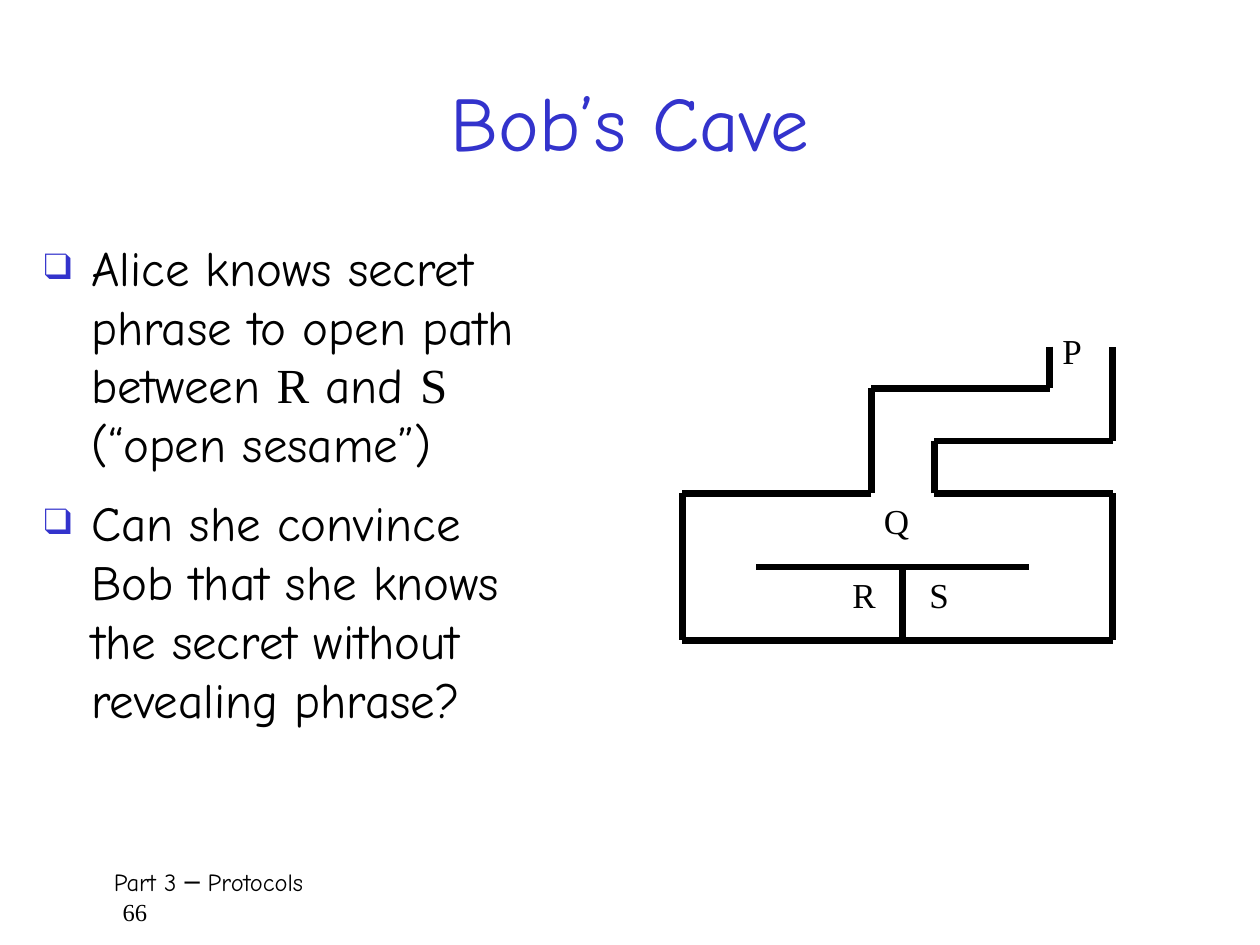
"""Build the Bob's Cave slide: title, two bullets and a cave plan."""
from itertools import pairwise

from lxml import etree
from pptx import Presentation
from pptx.dml.color import RGBColor
from pptx.enum import shapes, text
from pptx.oxml import ns
from pptx.util import Pt

BLACK = RGBColor(0, 0, 0)
BLUE = RGBColor(0x33, 0x33, 0xCC)
SANS, SERIF = "Comic Neue", "Times New Roman"

TITLE = "Bob’s Cave"
BULLETS = [
    [("Alice knows secret phrase to open path between ", SANS), ("R", SERIF),
     (" and ", SANS), ("S", SERIF), (" (“open sesame”)", SANS)],
    [("Can she convince Bob that she knows the secret without revealing phrase?", SANS)],
]
FOOTER = [("Part 3 ─ Protocols", SANS, 4), ("66", SERIF, 9)]
WALLS = [
    [(600, 198), (600, 222), (498, 222), (498, 282), (390, 282), (390, 366),
     (636, 366), (636, 282), (534, 282), (534, 252), (636, 252), (636, 198)],
    [(516, 366), (516, 324)],
    [(432, 324), (588, 324)],
]
SPOTS = [("P", 600, 185), ("Q", 498, 282), ("R", 480, 324), ("S", 524, 324)]


def add_box(slide, left, top, width, height, wrap=True):
    frame = slide.shapes.add_textbox(Pt(left), Pt(top), Pt(width), Pt(height)).text_frame
    frame.word_wrap = wrap
    return frame


def set_font(font, size, name, color=BLACK):
    font.size, font.name = Pt(size), name
    font.color.rgb = color


def set_bullet(para):
    props = para._p.get_or_add_pPr()
    props.set("marL", str(Pt(27)))
    props.set("indent", str(-Pt(27)))
    color = etree.SubElement(props, ns.qn("a:buClr"))
    etree.SubElement(color, ns.qn("a:srgbClr"), val=str(BLUE))
    etree.SubElement(props, ns.qn("a:buSzPct"), val="75000")
    etree.SubElement(props, ns.qn("a:buFont"), typeface=SERIF)
    etree.SubElement(props, ns.qn("a:buChar"), char="❑")


def add_wall(slide, start, end):
    wall = slide.shapes.add_connector(
        shapes.MSO_CONNECTOR.STRAIGHT, *(Pt(n) for n in start + end))
    wall.line.color.rgb = BLACK
    wall.line.width = Pt(4)
    etree.SubElement(wall._element.spPr, ns.qn("a:effectLst"))


def add_text(slide):
    frame = add_box(slide, 54, 36, 612, 66)
    frame.vertical_anchor = text.MSO_ANCHOR.MIDDLE
    para = frame.paragraphs[0]
    para.text = TITLE
    para.alignment = text.PP_ALIGN.CENTER
    set_font(para.font, 44, SANS, BLUE)

    frame = add_box(slide, 18, 132, 306, 342)
    for i, parts in enumerate(BULLETS):
        para = frame.add_paragraph() if i else frame.paragraphs[0]
        para.space_before, para.space_after = Pt(5.6), Pt(6)
        set_bullet(para)
        set_font(para.font, 28, SANS)
        for words, name in parts:
            run = para.add_run()
            run.text = words
            set_font(run.font, 28, name)

    frame = add_box(slide, 54, 492, 618, 36)
    for i, (words, name, inset) in enumerate(FOOTER):
        para = frame.add_paragraph() if i else frame.paragraphs[0]
        para.text = words
        para._p.get_or_add_pPr().set("marL", str(Pt(inset)))
        set_font(para.font, 14, name)


def add_cave(slide):
    for wall in WALLS:
        for start, end in pairwise(wall):
            add_wall(slide, start, end)
    for name, left, top in SPOTS:
        para = add_box(slide, left, top, 29, 31, wrap=False).paragraphs[0]
        para.text = name
        set_font(para.font, 20, SERIF)


def main():
    deck = Presentation()
    deck.slide_width, deck.slide_height = Pt(720), Pt(540)
    slide = deck.slides.add_slide(deck.slide_layouts[6])
    add_text(slide)
    add_cave(slide)
    deck.save("out.pptx")


if __name__ == "__main__":
    main()
